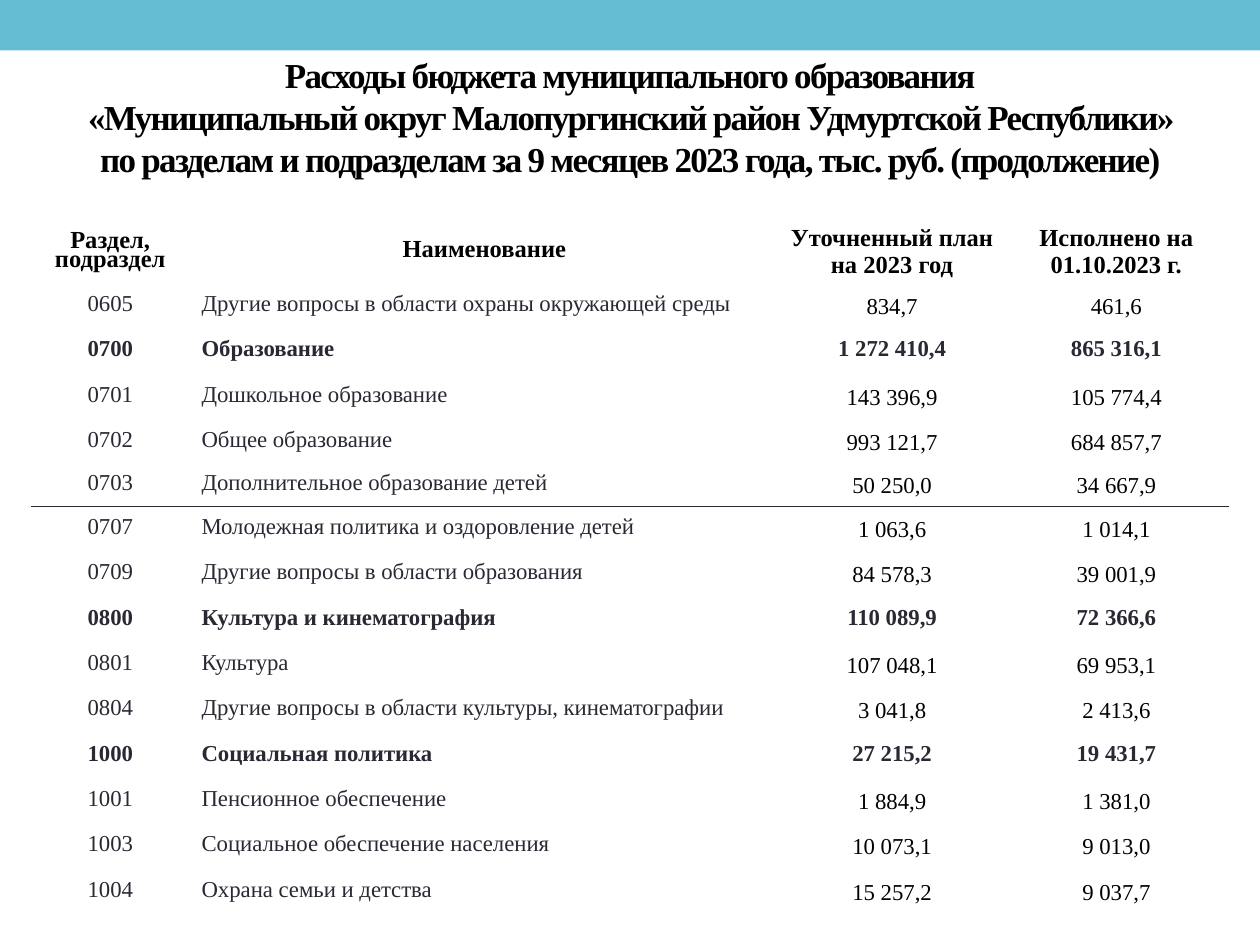
"""Builds the slide on budget spending by section for nine months of 2023."""
from lxml import etree
from pptx import Presentation
from pptx import util as u
from pptx.dml.color import RGBColor
from pptx.enum import shapes, text
from pptx.oxml.ns import qn

COLORS = {"band": "64BDD2", "white": "FFFFFF", "dark": "292934", "black": "000000"}
FONT = "Times New Roman"
COLUMN_WIDTHS = [1.25, 4.69, 1.78, 1.78]
HEADINGS = ["Раздел, подраздел", "Наименование",
            "Уточненный план на 2023 год", "Исполнено на 01.10.2023 г."]
SPENDING = [
    ["0605", "Другие вопросы в области охраны окружающей среды", "834,7", "461,6"],
    ["0700", "Образование", "1 272 410,4", "865 316,1"],
    ["0701", "Дошкольное образование", "143 396,9", "105 774,4"],
    ["0702", "Общее образование", "993 121,7", "684 857,7"],
    ["0703", "Дополнительное образование детей", "50 250,0", "34 667,9"],
    ["0707", "Молодежная политика и оздоровление детей", "1 063,6", "1 014,1"],
    ["0709", "Другие вопросы в области образования", "84 578,3", "39 001,9"],
    ["0800", "Культура и кинематография", "110 089,9", "72 366,6"],
    ["0801", "Культура", "107 048,1", "69 953,1"],
    ["0804", "Другие вопросы в области культуры, кинематографии", "3 041,8", "2 413,6"],
    ["1000", "Социальная политика", "27 215,2", "19 431,7"],
    ["1001", "Пенсионное обеспечение", "1 884,9", "1 381,0"],
    ["1003", "Социальное обеспечение населения", "10 073,1", "9 013,0"],
    ["1004", "Охрана семьи и детства", "15 257,2", "9 037,7"],
]
RULED_CODE = "0703"


def add_text(paragraph, words, size, color, bold):
    run = paragraph.add_run()
    run.text = words
    run.font.name = FONT
    run.font.size = u.Pt(size)
    run.font.bold = bold
    run.font.color.rgb = RGBColor.from_string(COLORS[color])
    return run


def set_border(cell, side, color, points):
    properties = cell._tc.get_or_add_tcPr()
    edge = etree.SubElement(properties, qn(f"a:ln{side}"), w=str(u.Pt(points)))
    fill = etree.SubElement(edge, qn("a:solidFill"))
    etree.SubElement(fill, qn("a:srgbClr"), val=COLORS[color])


deck = Presentation()
deck.slide_width, deck.slide_height = u.Inches(10), u.Inches(7.5)
slide = deck.slides.add_slide(deck.slide_layouts[5])

band = slide.shapes.add_shape(
    shapes.MSO_SHAPE.RECTANGLE, 0, 0, deck.slide_width, u.Inches(0.4))
band.shadow.inherit = False
band.fill.solid()
band.fill.fore_color.rgb = RGBColor.from_string(COLORS["band"])
band.line.fill.background()

title = slide.shapes.title
band._element.addnext(title._element)
title.left, title.top = u.Inches(0.5), u.Inches(0.3)
title.width, title.height = u.Inches(9), u.Inches(1.25)
title.text_frame.vertical_anchor = text.MSO_ANCHOR.MIDDLE
title.text_frame.auto_size = text.MSO_AUTO_SIZE.NONE
title.text_frame.word_wrap = True
heading = title.text_frame.paragraphs[0]
heading.alignment = text.PP_ALIGN.CENTER
for number, words in enumerate([
        "Расходы бюджета муниципального образования",
        "«Муниципальный округ Малопургинский район Удмуртской Республики» "
        "по разделам и подразделам за 9 месяцев 2023 года, тыс. руб. (продолжение)"]):
    if number:
        heading.add_line_break()
    run = add_text(heading, words, 20, "black", True)
    run.font._element.set("spc", "-100")

rows = [HEADINGS] + SPENDING
budget = slide.shapes.add_table(
    len(rows), len(COLUMN_WIDTHS), u.Inches(0.25), u.Inches(1.75),
    u.Inches(9.5), u.Inches(5.5)).table
budget.first_row = budget.horz_banding = False
for column, width in zip(budget.columns, COLUMN_WIDTHS):
    column.width = u.Inches(width)

for r, values in enumerate(rows):
    code = values[0]
    header = r == 0
    section = code.endswith("00")
    budget.rows[r].height = u.Inches(0.5 if header else 0.33 if code == RULED_CODE else 0.36)
    top = "dark" if r and rows[r - 1][0] == RULED_CODE else "white"
    bottom = "dark" if code == RULED_CODE else "white"
    for c, words in enumerate(values):
        cell = budget.cell(r, c)
        amount = c >= 2 and not section
        cell.vertical_anchor = text.MSO_ANCHOR.MIDDLE
        if amount:
            inset = u.Inches(0 if header else 0.01)
            cell.margin_left = cell.margin_right = cell.margin_top = inset
            cell.margin_bottom = 0
        paragraph = cell.text_frame.paragraphs[0]
        left = c == 1 and not header
        paragraph.alignment = text.PP_ALIGN.LEFT if left else text.PP_ALIGN.CENTER
        if not amount:
            paragraph.line_spacing = 0.7
        add_text(paragraph, words, 14 if header else 13,
                 "black" if header or amount else "dark", header or section)
        set_border(cell, "L", "white", 1)
        set_border(cell, "R", "white", 1)
        set_border(cell, "T", top, 3 if r == 1 else 1)
        set_border(cell, "B", bottom, 3 if header else 1)
        cell.fill.background()

deck.save("out.pptx")
